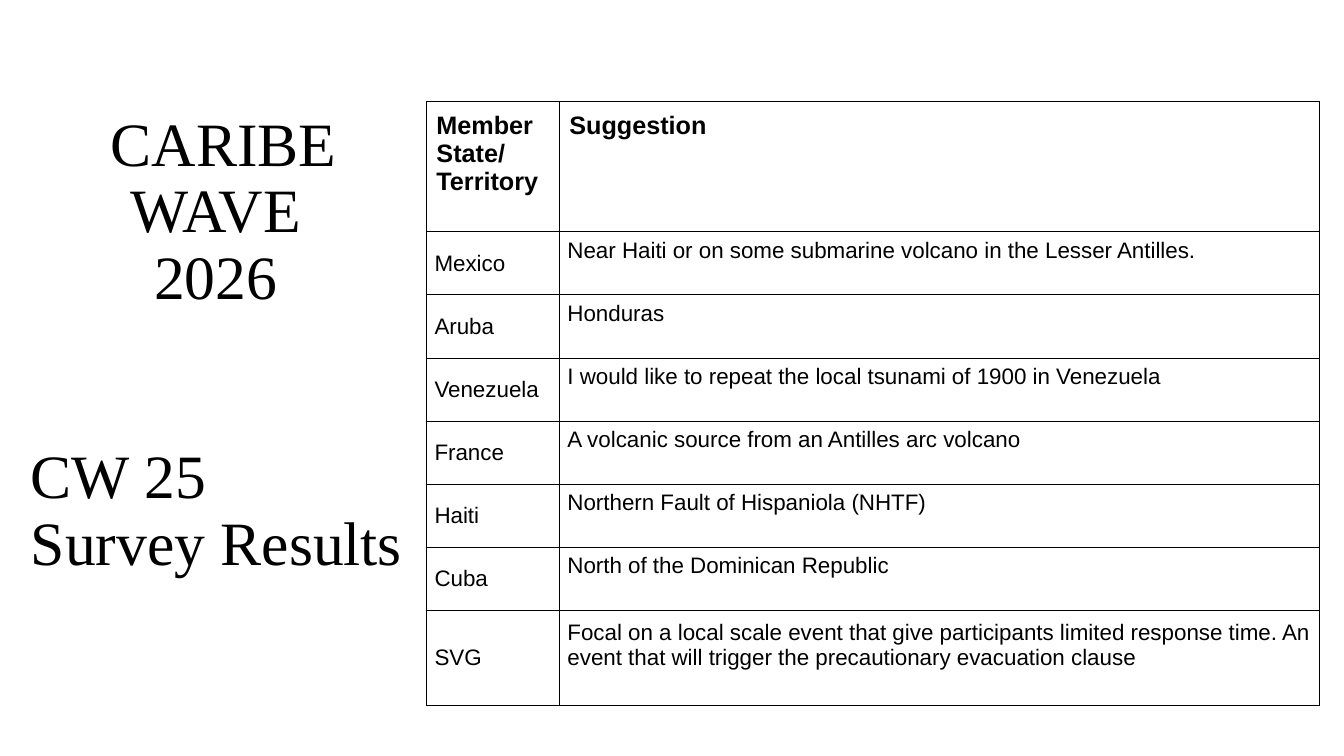
"""Builds the CARIBE WAVE 2026 slide with the CW 25 survey results table."""
from lxml import etree
from pptx import Presentation
from pptx.dml.color import RGBColor
from pptx.enum.text import MSO_ANCHOR, PP_ALIGN
from pptx.oxml.ns import qn
from pptx.util import Cm, Pt

TOP, MIDDLE = MSO_ANCHOR.TOP, MSO_ANCHOR.MIDDLE
LEFT, CENTER = PP_ALIGN.LEFT, PP_ALIGN.CENTER
BLACK = "000000"


def add_span(para, text, font, size, color, bold=False):
    span = para.add_run()
    span.text = text
    span.font.name = font
    span.font.size = Pt(size)
    span.font.bold = bold
    span.font.color.rgb = RGBColor.from_string(color)


def draw_borders(cell, color, width):
    properties = cell._tc.get_or_add_tcPr()
    for side in ("a:lnL", "a:lnR", "a:lnT", "a:lnB"):
        line = etree.SubElement(properties, qn(side), w=str(Pt(width)))
        fill = etree.SubElement(line, qn("a:solidFill"))
        etree.SubElement(fill, qn("a:srgbClr"), val=color)


deck = Presentation()
deck.slide_width, deck.slide_height = Cm(33.87), Cm(19.05)
page = deck.slides.add_slide(deck.slide_layouts[6])

title_lines = [
    ("CARIBE WAVE ", CENTER, 0),
    ("2026 ", CENTER, 0),
    ("CW 25", LEFT, 95),
    ("Survey Results", LEFT, 0),
]
title_box = page.shapes.add_textbox(Cm(0.53), Cm(2.72), Cm(10.21), Cm(13.64))
title = title_box.text_frame
title.word_wrap = True
title.vertical_anchor = TOP
for index, (text, alignment, gap) in enumerate(title_lines):
    para = title.add_paragraph() if index else title.paragraphs[0]
    para.alignment = alignment
    para.line_spacing = 0.9
    para.space_before = Pt(gap)
    add_span(para, text, "Times New Roman", 44, BLACK)

suggestions = [
    ("Member State/\nTerritory", "Suggestion"),
    ("Mexico", "Near Haiti or on some submarine volcano in the Lesser Antilles."),
    ("Aruba", "Honduras"),
    ("Venezuela", "I would like to repeat the local tsunami of 1900 in Venezuela"),
    ("France", "A volcanic source from an Antilles arc volcano"),
    ("Haiti", "Northern Fault of Hispaniola (NHTF)"),
    ("Cuba", "North of the Dominican Republic"),
    ("SVG", "Focal on a local scale event that give participants limited response time. "
            "An event that will trigger the precautionary evacuation clause"),
]
column_widths = [3.35, 19.16]
row_heights = [3.28] + [1.59] * 6 + [2.39]
table = page.shapes.add_table(
    len(row_heights), len(column_widths), Cm(10.75), Cm(2.56),
    Cm(sum(column_widths)), Cm(sum(row_heights))).table
for column, width in zip(table.columns, column_widths):
    column.width = Cm(width)

for row_index, row_texts in enumerate(suggestions):
    table.rows[row_index].height = Cm(row_heights[row_index])
    is_header = row_index == 0
    for column_index, text in enumerate(row_texts):
        cell = table.cell(row_index, column_index)
        cell.margin_left = cell.margin_right = Cm(0.25 if is_header else 0.2)
        cell.margin_top = Cm(0.25 if is_header else 0)
        cell.margin_bottom = Cm(0.25 if is_header else 0.64 * column_index)
        cell.vertical_anchor = TOP if is_header else MIDDLE
        draw_borders(cell, BLACK, 0.75)
        cell.fill.background()
        for line_index, line in enumerate(text.split("\n")):
            frame = cell.text_frame
            para = frame.add_paragraph() if line_index else frame.paragraphs[0]
            add_span(para, line, "Arial", 18 if is_header else 16, BLACK, is_header)

deck.save("out.pptx")
